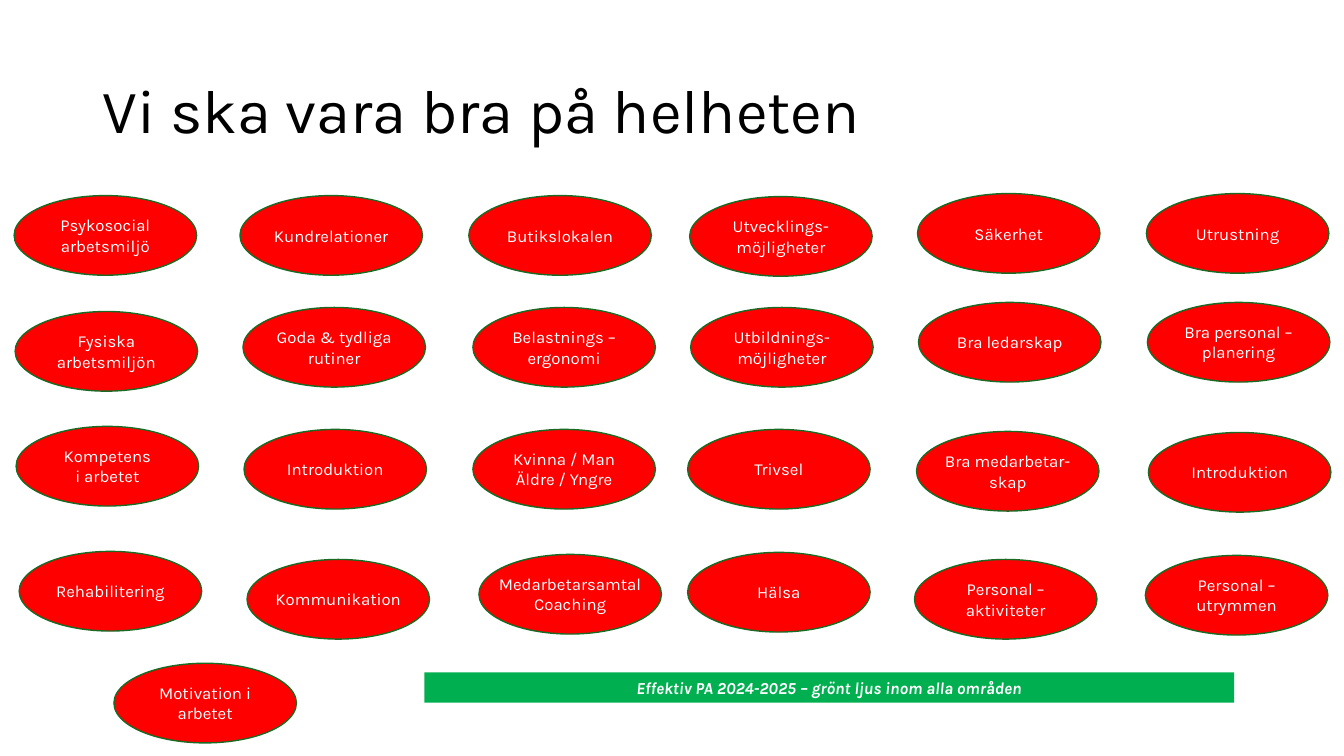
from pptx import Presentation
from pptx.dml.color import RGBColor
from pptx.enum.shapes import MSO_SHAPE
from pptx.enum.text import MSO_ANCHOR, MSO_AUTO_SIZE, PP_ALIGN
from pptx.util import Inches, Pt

OVAL, RECT = MSO_SHAPE.OVAL, MSO_SHAPE.RECTANGLE
MIDDLE, TOP = MSO_ANCHOR.MIDDLE, MSO_ANCHOR.TOP
LEFT, CENTER = PP_ALIGN.LEFT, PP_ALIGN.CENTER
GROW = MSO_AUTO_SIZE.SHAPE_TO_FIT_TEXT

# Content
TITLE = "Vi ska vara bra på helheten"
BANNER = "Effektiv PA 2024-2025 – grönt ljus inom alla områden"

# Hand-placed ovals, column by column: left, top, lines of text
AREAS = [
    (0.14, 1.94, ["Psykosocial", "arbetsmiljö"]),
    (0.15, 3.09, ["Fysiska", "arbetsmiljön"]),
    (0.16, 4.23, ["Kompetens", "i arbetet"]),
    (0.19, 5.47, ["Rehabilitering"]),
    (1.13, 6.58, ["Motivation i", "arbetet"]),
    (2.38, 1.94, ["Kundrelationer"]),
    (2.41, 3.05, ["Goda & tydliga", "rutiner"]),
    (2.42, 4.26, ["Introduktion"]),
    (2.45, 5.55, ["Kommunikation"]),
    (4.65, 1.94, ["Butikslokalen"]),
    (4.69, 3.05, ["Belastnings –", "ergonomi"]),
    (4.69, 4.26, ["Kvinna / Man", "Äldre / Yngre"]),
    (4.75, 5.5, ["Medarbetarsamtal", "Coaching"]),
    (6.84, 1.95, ["Utvecklings-", "möjligheter"]),
    (6.85, 3.05, ["Utbildnings-", "möjligheter"]),
    (6.82, 4.26, ["Trivsel"]),
    (6.82, 5.48, ["Hälsa"]),
    (9.1, 1.92, ["Säkerhet"]),
    (9.11, 3, ["Bra ledarskap"]),
    (9.09, 4.28, ["Bra medarbetar-", "skap"]),
    (9.07, 5.55, ["Personal –", "aktiviteter"]),
    (11.37, 1.92, ["Utrustning"]),
    (11.38, 3, ["Bra personal –", "planering"]),
    (11.39, 4.29, ["Introduktion"]),
    (11.36, 5.51, ["Personal –", "utrymmen"]),
]
OVAL_SIZE = (1.81, 0.79)
TITLE_BOX = (0.92, 0.4, 11.5, 1.45)
BANNER_BOX = (4.21, 6.67, 8.03, 0.3)

THEME = {
    "font": "Karla",
    "title_size": 44,
    "body_size": 12,
    "black": RGBColor(0x00, 0x00, 0x00),
    "white": RGBColor(0xFF, 0xFF, 0xFF),
    "red": RGBColor(0xFF, 0x00, 0x00),
    "green": RGBColor(0x00, 0xB0, 0x50),
    "outline": RGBColor(0x19, 0x6B, 0x24),
}


def write(tf, lines, size="body_size", color="white", align=CENTER,
          anchor=MIDDLE, wrap=True, emphasis=False, spacing=None):
    tf.word_wrap = wrap
    tf.vertical_anchor = anchor
    for i, line in enumerate(lines):
        p = tf.add_paragraph() if i else tf.paragraphs[0]
        p.alignment = align
        if spacing:
            p.line_spacing = spacing
        r = p.add_run()
        r.text = line
        r.font.name = THEME["font"]
        r.font.size = Pt(THEME[size])
        r.font.color.rgb = THEME[color]
        if emphasis:
            r.font.bold = r.font.italic = True


def add_box(s, kind, box, fill, line=None):
    sp = s.shapes.add_shape(kind, *map(Inches, box))
    sp.shadow.inherit = False
    sp.fill.solid()
    sp.fill.fore_color.rgb = THEME[fill]
    if line:
        sp.line.color.rgb = THEME[line]
        sp.line.width = Pt(1)
    else:
        sp.line.fill.background()
    return sp


def main():
    prs = Presentation()
    prs.slide_width, prs.slide_height = Inches(13.33), Inches(7.5)
    s = prs.slides.add_slide(prs.slide_layouts[6])

    # Title
    title = s.shapes.add_textbox(*map(Inches, TITLE_BOX))
    write(title.text_frame, [TITLE], "title_size", "black", LEFT, spacing=0.9)

    # Areas
    for left, top, lines in AREAS:
        sp = add_box(s, OVAL, (left, top, *OVAL_SIZE), "red", "outline")
        write(sp.text_frame, lines, wrap=False)

    # Banner
    banner = add_box(s, RECT, BANNER_BOX, "green")
    write(banner.text_frame, [BANNER], anchor=TOP, emphasis=True)
    banner.text_frame.auto_size = GROW

    prs.save("out.pptx")


if __name__ == "__main__":
    main()
